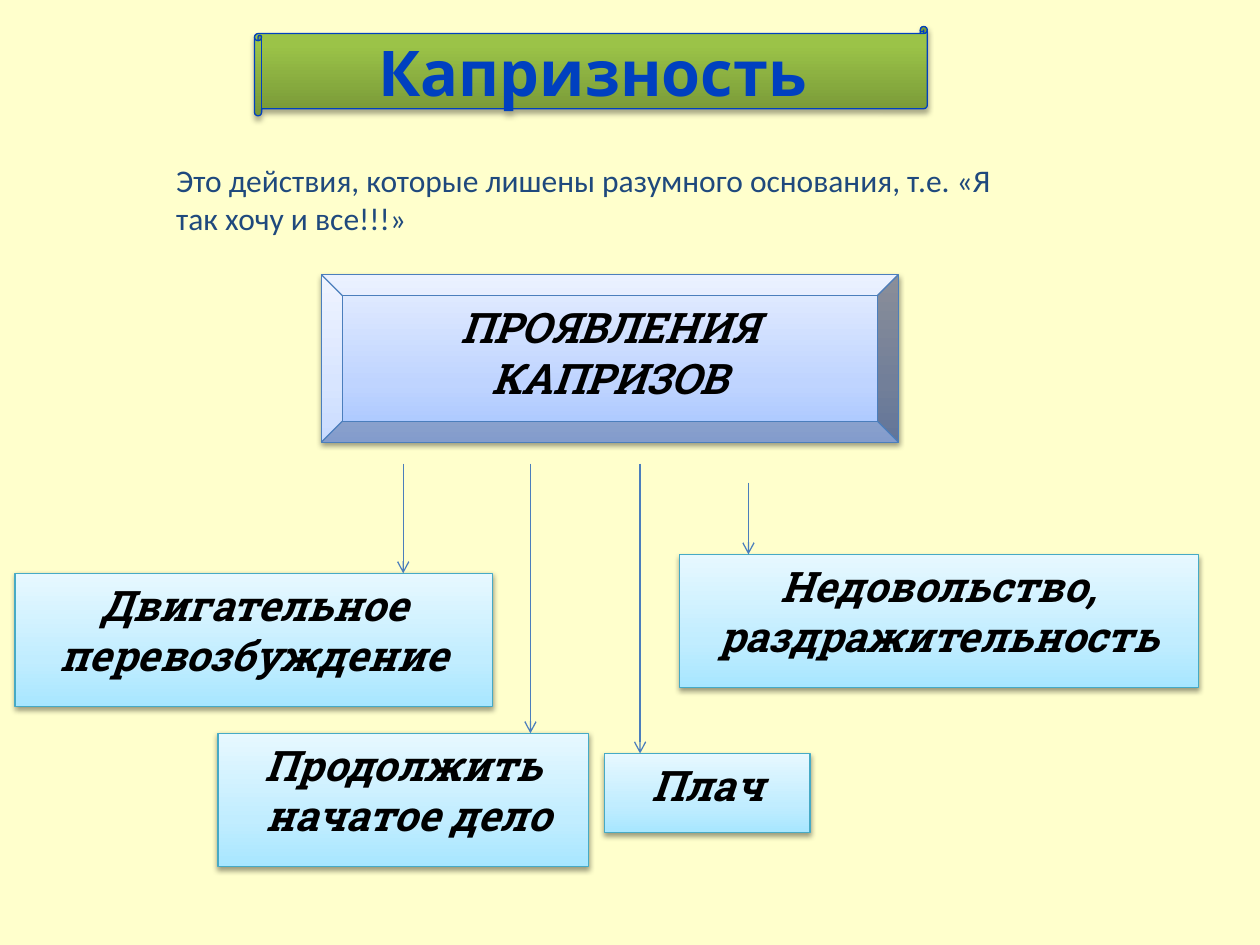
from lxml import etree
from pptx import Presentation
from pptx.dml.color import RGBColor
from pptx.enum.shapes import MSO_CONNECTOR, MSO_SHAPE
from pptx.enum.text import MSO_ANCHOR, PP_ALIGN
from pptx.oxml import parse_xml
from pptx.oxml.ns import nsdecls, qn
from pptx.util import Inches, Pt

SCROLL, BEVEL, RECTANGLE = MSO_SHAPE.HORIZONTAL_SCROLL, MSO_SHAPE.BEVEL, MSO_SHAPE.RECTANGLE
TOP, MIDDLE = MSO_ANCHOR.TOP, MSO_ANCHOR.MIDDLE
CENTER = PP_ALIGN.CENTER

CREAM = RGBColor(0xFF, 0xFF, 0xCC)
ROYAL_BLUE = RGBColor(0x00, 0x40, 0xC0)
NAVY = RGBColor(0x1F, 0x49, 0x7D)
STEEL_BLUE = RGBColor(0x4B, 0x7E, 0xBC)
TEAL = RGBColor(0x46, 0xAA, 0xC5)
BLACK = RGBColor(0, 0, 0)

GREEN_STOPS = [(0, RGBColor(0x77, 0x97, 0x37)), (80, RGBColor(0x9B, 0xC3, 0x48)),
               (100, RGBColor(0x9D, 0xC7, 0x46))]
BLUE_STOPS = [(0, RGBColor(0xA4, 0xC4, 0xFF)), (35, RGBColor(0xBF, 0xD4, 0xFF)),
              (100, RGBColor(0xE6, 0xEE, 0xFF))]
SKY_STOPS = [(0, RGBColor(0xA7, 0xE6, 0xFF)), (35, RGBColor(0xC1, 0xED, 0xFF)),
             (100, RGBColor(0xE7, 0xF8, 0xFF))]

TITLE_FONT = {"name": "Comic Neue", "size": Pt(36), "bold": True}
BOX_FONT = {"name": "Roboto Slab", "size": Pt(24), "bold": True, "italic": True}
BODY_FONT = {"name": "Calibri", "size": Pt(18)}


def write_text(frame, lines, font_format, color, alignment=None):
    frame.word_wrap = True
    for index, line in enumerate(lines):
        paragraph = frame.paragraphs[0] if index == 0 else frame.add_paragraph()
        paragraph.alignment = alignment
        run = paragraph.add_run()
        run.text = line
        for attribute, value in font_format.items():
            setattr(run.font, attribute, value)
        run.font.color.rgb = color


def style_panel(panel, stops, outline, shadow_opacity, shadow_distance):
    """Give a panel a bottom-to-top gradient, a thin outline and a soft shadow below."""
    panel.fill.gradient()
    panel.fill.gradient_angle = 90
    properties = panel.element.spPr
    stop_list = properties.find(qn("a:gradFill")).find(qn("a:gsLst"))
    for old_stop in list(stop_list):
        stop_list.remove(old_stop)
    for position, color in stops:
        stop = etree.SubElement(stop_list, qn("a:gs"), pos=str(position * 1000))
        etree.SubElement(stop, qn("a:srgbClr"), val=str(color))
    panel.line.color.rgb = outline
    panel.line.width = Pt(0.75)
    panel.shadow.inherit = False
    properties.find(qn("a:effectLst")).append(parse_xml(
        f'<a:outerShdw {nsdecls("a")} blurRad="{Pt(3.1)}" dist="{Pt(shadow_distance)}" '
        f'dir="5400000" rotWithShape="0"><a:srgbClr val="000000">'
        f'<a:alpha val="{shadow_opacity * 1000}"/></a:srgbClr></a:outerShdw>'))


presentation = Presentation()
presentation.slide_width = Inches(10)
presentation.slide_height = Inches(7.5)
slide = presentation.slides.add_slide(presentation.slide_layouts[6])
slide.background.fill.solid()
slide.background.fill.fore_color.rgb = CREAM

# Title scroll
title = slide.shapes.add_shape(SCROLL, Inches(2.02), Inches(0.21), Inches(5.34), Inches(0.71))
title.adjustments[0] = 0.08
style_panel(title, GREEN_STOPS, ROYAL_BLUE, 35, 1.8)
title.text_frame.vertical_anchor = MIDDLE
write_text(title.text_frame, ["Капризность"], TITLE_FONT, ROYAL_BLUE, CENTER)

# Definition
definition = slide.shapes.add_textbox(Inches(1.3), Inches(1.23), Inches(7.05), Inches(0.71))
write_text(definition.text_frame,
           ["Это действия, которые лишены разумного основания, т.е. «Я так хочу и все!!!»"],
           BODY_FONT, NAVY)

# Heading and the four manifestations
boxes = [
    (BEVEL, 2.55, 2.18, 4.58, 1.33, BLUE_STOPS, STEEL_BLUE, ["ПРОЯВЛЕНИЯ КАПРИЗОВ"]),
    (RECTANGLE, 1.73, 5.82, 2.94, 1.06, SKY_STOPS, TEAL, ["Продолжить", " начатое дело"]),
    (RECTANGLE, 0.12, 4.55, 3.79, 1.06, SKY_STOPS, TEAL, ["Двигательное перевозбуждение"]),
    (RECTANGLE, 5.39, 4.4, 4.12, 1.06, SKY_STOPS, TEAL, ["Недовольство, раздражительность"]),
    (RECTANGLE, 4.8, 5.98, 1.63, 0.63, SKY_STOPS, TEAL, ["Плач"]),
]
for preset, left, top, width, height, stops, outline, lines in boxes:
    box = slide.shapes.add_shape(preset, Inches(left), Inches(top), Inches(width), Inches(height))
    style_panel(box, stops, outline, 38, 1.6)
    box.text_frame.vertical_anchor = TOP
    write_text(box.text_frame, lines, BOX_FONT, BLACK, CENTER)

# Arrows from the heading down to each manifestation
for x, start, end in [(3.2, 3.68, 4.55), (5.94, 3.83, 4.4), (4.21, 3.68, 5.82), (5.08, 3.68, 5.98)]:
    arrow = slide.shapes.add_connector(
        MSO_CONNECTOR.STRAIGHT, Inches(x), Inches(start), Inches(x), Inches(end))
    arrow.line.color.rgb = STEEL_BLUE
    arrow.line.width = Pt(0.75)
    etree.SubElement(arrow.line._get_or_add_ln(), qn("a:tailEnd"), type="arrow")
    etree.SubElement(arrow.element.spPr, qn("a:effectLst"))

presentation.save("out.pptx")
